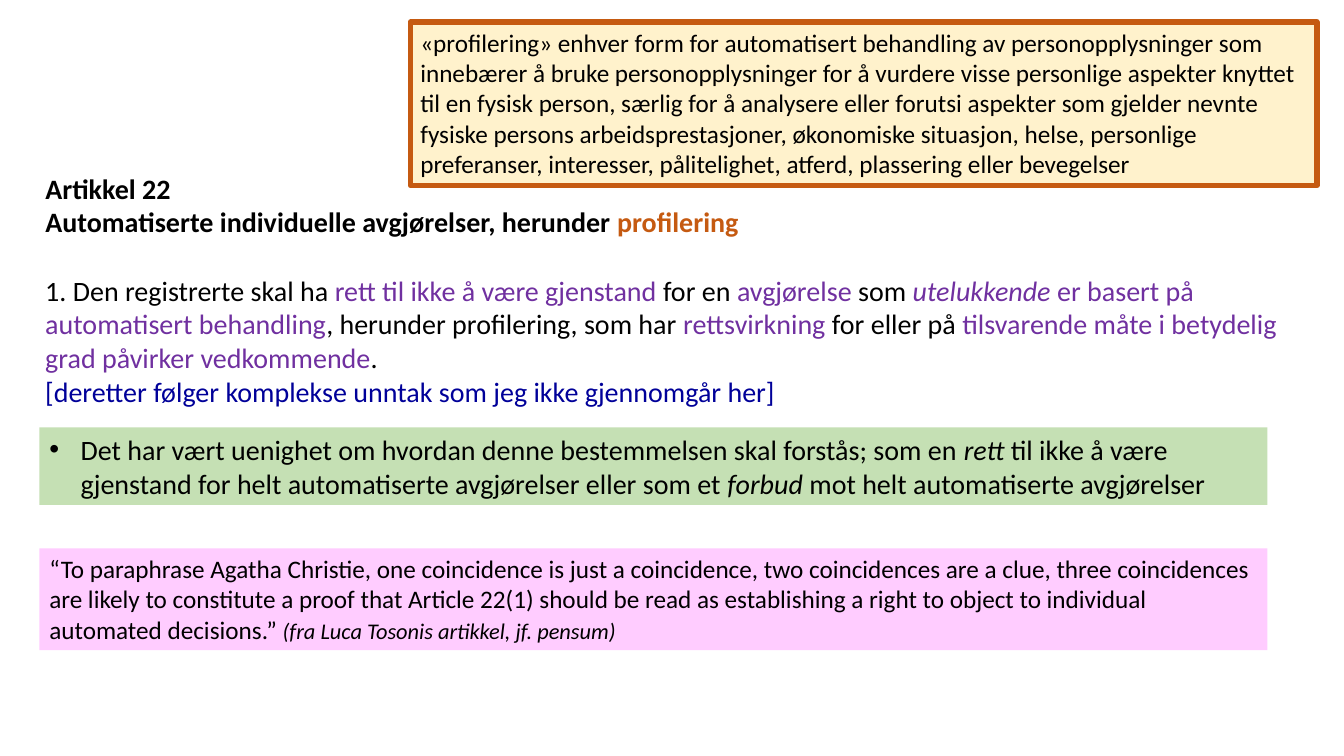
from pptx import Presentation
from pptx.dml.color import RGBColor
from pptx.enum.shapes import MSO_SHAPE
from pptx.enum.text import MSO_ANCHOR, MSO_AUTO_SIZE, PP_ALIGN
from pptx.oxml.ns import qn
from pptx.util import Inches, Pt

RECT = MSO_SHAPE.RECTANGLE
TOP = MSO_ANCHOR.TOP
NO_FIT = MSO_AUTO_SIZE.NONE
LEFT = PP_ALIGN.LEFT

FONT = "Calibri"
BLACK, ORANGE, PURPLE, BLUE = "000000", "C55A11", "7030A0", "000099"
CREAM, GREEN, PINK = "FFF2CC", "C5E0B4", "FFCCFF"

# Each paragraph is a list of runs: (text, format), format being any of
# color, bold, italic, size.
VIOLET = {"color": PURPLE}
ITALIC = {"italic": True}

HEADING = [
    [("Artikkel 22", {"bold": True})],
    [("Automatiserte individuelle avgjørelser, herunder ", {"bold": True}),
     ("profilering", {"bold": True, "color": ORANGE})],
]
CLAUSE = [
    [("1. Den registrerte skal ha ", {}),
     ("rett til ikke å være gjenstand ", VIOLET),
     ("for en ", {}),
     ("avgjørelse", VIOLET),
     (" som ", {}),
     ("utelukkende", VIOLET | ITALIC),
     (" er basert på automatisert behandling", VIOLET),
     (", herunder profilering, som har ", {}),
     ("rettsvirkning", VIOLET),
     (" for eller på ", {}),
     ("tilsvarende måte i betydelig grad påvirker vedkommende", VIOLET),
     (".", {})],
    [("[deretter følger komplekse unntak som jeg ikke gjennomgår her]",
      {"color": BLUE})],
]
DEFINITION = [[(line, {})] for line in (
    "«profilering» enhver form for automatisert behandling av personopplysninger som",
    "innebærer å bruke personopplysninger for å vurdere visse personlige aspekter knyttet",
    "til en fysisk person, særlig for å analysere eller forutsi aspekter som gjelder nevnte",
    "fysiske persons arbeidsprestasjoner, økonomiske situasjon, helse, personlige",
    "preferanser, interesser, pålitelighet, atferd, plassering eller bevegelser",
)]
DISPUTE = [
    [("Det har vært uenighet om hvordan denne bestemmelsen skal forstås; som en ", {}),
     ("rett ", ITALIC),
     ("til ikke å være gjenstand for helt automatiserte avgjørelser eller som et ", {}),
     ("forbud", ITALIC),
     (" mot helt automatiserte avgjørelser", {})],
]
QUOTE = [
    [("“To paraphrase Agatha Christie, one coincidence is just a coincidence, two "
      "coincidences are a clue, three coincidences are likely to constitute a proof "
      "that Article 22(1) should be read as establishing a right to object to "
      "individual automated decisions.” ", {}),
     ("(fra Luca Tosonis artikkel, jf. pensum)", ITALIC | {"size": 16})],
]

# Layout in inches
LINE, PADDING = 0.337, 0.1  # line pitch at 20 pt; top plus bottom inset
ARTICLE_LEFT, ARTICLE_TOP, ARTICLE_W = 0.35, 1.65, 12.45
BAND_LEFT, BAND_W = 0.39, 12.18
HEADING_BOX = (ARTICLE_LEFT, ARTICLE_TOP, ARTICLE_W, 2 * LINE + PADDING)
CLAUSE_BOX = (ARTICLE_LEFT, ARTICLE_TOP + 3 * LINE, ARTICLE_W, 4 * LINE + PADDING)
DEFINITION_BOX = (4.07, 0.22, 8.99, 1.62)
DISPUTE_BOX = (BAND_LEFT, 4.24, BAND_W, 0.77)
QUOTE_BOX = (BAND_LEFT, 5.44, BAND_W, 1.01)
HANG = 0.31


def rgb(value):
    return RGBColor.from_string(value)


def place(sp, box):
    sp.left, sp.top, sp.width, sp.height = map(Inches, box)


def paint(sp, color):
    sp.fill.solid()
    sp.fill.fore_color.rgb = rgb(color)


def write(sp, paragraphs, size, wrap=True):
    tf = sp.text_frame
    tf.word_wrap = wrap
    tf.auto_size = NO_FIT
    tf.vertical_anchor = TOP
    for i, runs in enumerate(paragraphs):
        p = tf.add_paragraph() if i else tf.paragraphs[0]
        p.alignment = LEFT
        p.space_before = Pt(0)
        for text, style in runs:
            r = p.add_run()
            r.text = text
            r.font.name = FONT
            r.font.size = Pt(style.get("size", size))
            r.font.bold = style.get("bold", False)
            r.font.italic = style.get("italic", False)
            r.font.color.rgb = rgb(style.get("color", BLACK))


def add_panel(slide, box, color):
    sp = slide.shapes.add_shape(RECT, *map(Inches, box))
    sp.shadow.inherit = False
    paint(sp, color)
    sp.line.fill.background()
    return sp


def set_bullet(p, hang):
    pPr = p._p.get_or_add_pPr()
    pPr.set("marL", str(Inches(hang)))
    pPr.set("indent", str(-Inches(hang)))
    font = pPr.makeelement(qn("a:buFont"), {"typeface": "Arial"})
    bullet = pPr.makeelement(qn("a:buChar"), {"char": "•"})
    pPr.extend([font, bullet])


def main():
    prs = Presentation()
    prs.slide_width, prs.slide_height = Inches(13.33), Inches(7.5)
    slide = prs.slides.add_slide(prs.slide_layouts[1])

    heading, dispute = slide.placeholders
    place(heading, HEADING_BOX)
    write(heading, HEADING, 20)

    clause = slide.shapes.add_textbox(*map(Inches, CLAUSE_BOX))
    write(clause, CLAUSE, 20)

    definition = add_panel(slide, DEFINITION_BOX, CREAM)
    definition.line.color.rgb = rgb(ORANGE)
    definition.line.width = Pt(4)
    write(definition, DEFINITION, 18, wrap=False)

    place(dispute, DISPUTE_BOX)
    paint(dispute, GREEN)
    write(dispute, DISPUTE, 20)
    set_bullet(dispute.text_frame.paragraphs[0], HANG)

    quote = add_panel(slide, QUOTE_BOX, PINK)
    write(quote, QUOTE, 18)

    prs.save("out.pptx")


if __name__ == "__main__":
    main()
